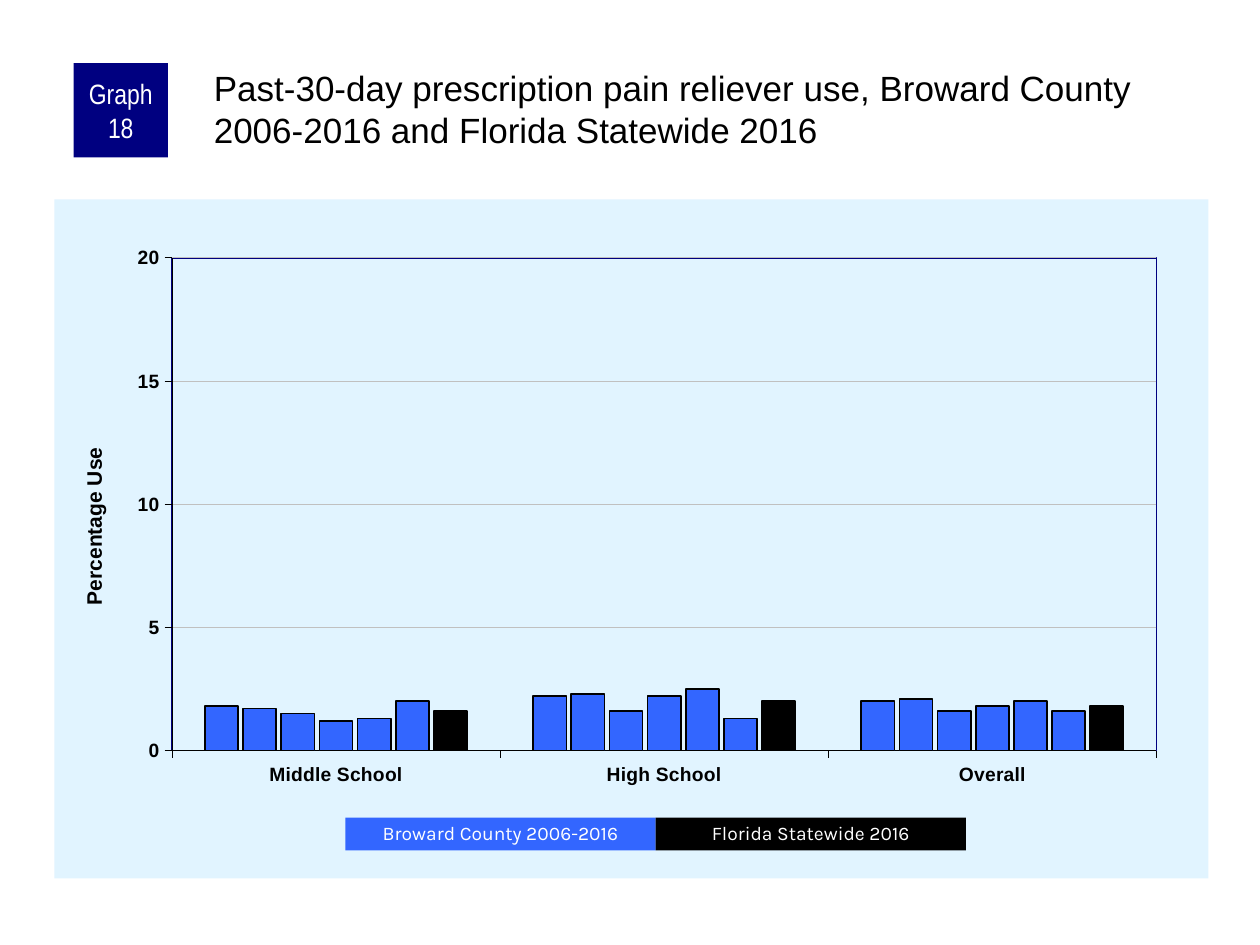
"""Build the slide on past-30-day prescription pain reliever use."""
from lxml.etree import fromstring
from pptx import Presentation
from pptx.chart.data import CategoryChartData
from pptx.dml.color import RGBColor
from pptx.enum.chart import XL_CHART_TYPE, XL_TICK_MARK
from pptx.enum.shapes import MSO_SHAPE
from pptx.enum.text import MSO_ANCHOR, PP_ALIGN
from pptx.util import Pt

TITLE = ("Past-30-day prescription pain reliever use, Broward County "
         "2006-2016 and Florida Statewide 2016")
GRAPH_LABEL = "Graph 18"
AXIS_TITLE = "Percentage Use"
CATEGORIES = ["Middle School", "High School", "Overall"]
BROWARD = [
    (1.8, 2.2, 2.0),
    (1.7, 2.3, 2.1),
    (1.5, 1.6, 1.6),
    (1.2, 2.2, 1.8),
    (1.3, 2.5, 2.0),
    (2.0, 1.3, 1.6),
]
FLORIDA = (1.6, 2.0, 1.8)
LEGEND = [("Broward County 2006-2016", "blue"), ("Florida Statewide 2016", "black")]
LEGEND_LEFT, LEGEND_TOP, LEGEND_WIDTH, LEGEND_HEIGHT = 197.4, 467.3, 177.3, 18.7
COLORS = {"black": "000000", "white": "FFFFFF", "navy": "000080", "blue": "3366FF",
          "panel": "E1F4FF", "grid": "C0C0C0"}
CHART_NS = "http://schemas.openxmlformats.org/drawingml/2006/chart"
DRAWING_NS = "http://schemas.openxmlformats.org/drawingml/2006/main"


def rgb(name):
    return RGBColor.from_string(COLORS[name])


def set_font(font, size, name="Arial", color="black", bold=False):
    font.size, font.name, font.bold = Pt(size), name, bold
    font.color.rgb = rgb(color)


def set_line(line, color, width):
    line.color.rgb = rgb(color)
    line.width = Pt(width)


def add_text(slide, text, box, size, name="Arial", color="black", fill=None,
             align=PP_ALIGN.LEFT, anchor=MSO_ANCHOR.TOP, margins=(7.2, 3.6, 7.2, 3.6),
             spacing=None):
    position = [Pt(value) for value in box]
    if fill:
        shape = slide.shapes.add_shape(MSO_SHAPE.RECTANGLE, *position)
        shape.shadow.inherit = False
        shape.fill.solid()
        shape.fill.fore_color.rgb = rgb(fill)
        shape.line.fill.background()
    else:
        shape = slide.shapes.add_textbox(*position)
    frame = shape.text_frame
    frame.word_wrap = True
    frame.vertical_anchor = anchor
    (frame.margin_left, frame.margin_top,
     frame.margin_right, frame.margin_bottom) = [Pt(value) for value in margins]
    paragraph = frame.paragraphs[0]
    paragraph.alignment = align
    paragraph.line_spacing = spacing
    run = paragraph.add_run()
    run.text = text
    set_font(run.font, size, name, color)


def manual_layout(**values):
    items = "".join(f'<c:{key} val="{value}"/>' for key, value in values.items())
    return fromstring(f'<c:layout xmlns:c="{CHART_NS}"><c:manualLayout>{items}'
                      '</c:manualLayout></c:layout>')


def area_format(fill=None, line=None):
    def solid(color):
        if not color:
            return "<a:noFill/>"
        return f'<a:solidFill><a:srgbClr val="{COLORS[color]}"/></a:solidFill>'
    return fromstring(f'<c:spPr xmlns:c="{CHART_NS}" xmlns:a="{DRAWING_NS}">{solid(fill)}'
                      f'<a:ln w="{Pt(1)}">{solid(line)}</a:ln></c:spPr>')


def replace_layout(parent, layout, index):
    for old in parent.findall(f"{{{CHART_NS}}}layout"):
        parent.remove(old)
    parent.insert(index, layout)


def add_usage_chart(slide):
    data = CategoryChartData(number_format="General")
    data.categories = CATEGORIES
    for number, values in enumerate(BROWARD + [FLORIDA], 1):
        data.add_series(f"Series {number}", values)
    chart = slide.shapes.add_chart(XL_CHART_TYPE.COLUMN_CLUSTERED, Pt(31), Pt(113.9),
                                   Pt(659.5), Pt(388), data).chart
    chart.has_legend = chart.has_title = False
    set_font(chart.font, 8)
    plot = chart.plots[0]
    plot.gap_width, plot.overlap, plot.vary_by_categories = 200, -15, False
    for index, series in enumerate(plot.series):
        series.format.fill.solid()
        series.format.fill.fore_color.rgb = rgb("blue" if index < len(BROWARD) else "black")
        set_line(series.format.line, "black", 1)

    value_axis = chart.value_axis
    for axis in (chart.category_axis, value_axis):
        set_font(axis.tick_labels.font, 11, bold=True)
        axis.major_tick_mark = XL_TICK_MARK.OUTSIDE
        set_line(axis.format.line, "black", 0.25)
    value_axis.minimum_scale, value_axis.maximum_scale, value_axis.major_unit = 0, 20, 5
    set_line(value_axis.major_gridlines.format.line, "grid", 0.25)

    frame = value_axis.axis_title.text_frame
    frame.text = AXIS_TITLE
    set_font(frame.paragraphs[0].runs[0].font, 12, bold=True)
    title = value_axis.axis_title._element
    title.find(f".//{{{DRAWING_NS}}}bodyPr").set("rot", "-5400000")
    replace_layout(title, manual_layout(xMode="edge", yMode="edge", x=0.02, y=0.36), 1)

    chart_space = chart._chartSpace
    plot_area = chart_space.chart.plotArea
    replace_layout(plot_area, manual_layout(layoutTarget="inner", xMode="edge", yMode="edge",
                                            x=0.102, y=0.086, w=0.853, h=0.726), 0)
    plot_area.append(area_format(line="navy"))
    chart_space.chart.addnext(area_format(fill="panel"))


def main():
    presentation = Presentation()
    presentation.slide_width, presentation.slide_height = Pt(720), Pt(540)
    slide = presentation.slides.add_slide(presentation.slide_layouts[6])
    centred = {"align": PP_ALIGN.CENTER, "anchor": MSO_ANCHOR.MIDDLE, "color": "white"}
    add_usage_chart(slide)
    add_text(slide, GRAPH_LABEL, (42, 36, 54, 54), 16, name="Arial Narrow", fill="navy",
             margins=(3.6, 0, 3.6, 0), **centred)
    add_text(slide, TITLE, (120, 36, 570, 60), 20, margins=(2.2, 2.2, 0, 0))
    for index, (label, color) in enumerate(LEGEND):
        box = (LEGEND_LEFT + index * LEGEND_WIDTH, LEGEND_TOP, LEGEND_WIDTH, LEGEND_HEIGHT)
        add_text(slide, label, box, 11, name="Karla", fill=color, spacing=0.9, **centred)
    presentation.save("out.pptx")


if __name__ == "__main__":
    main()
